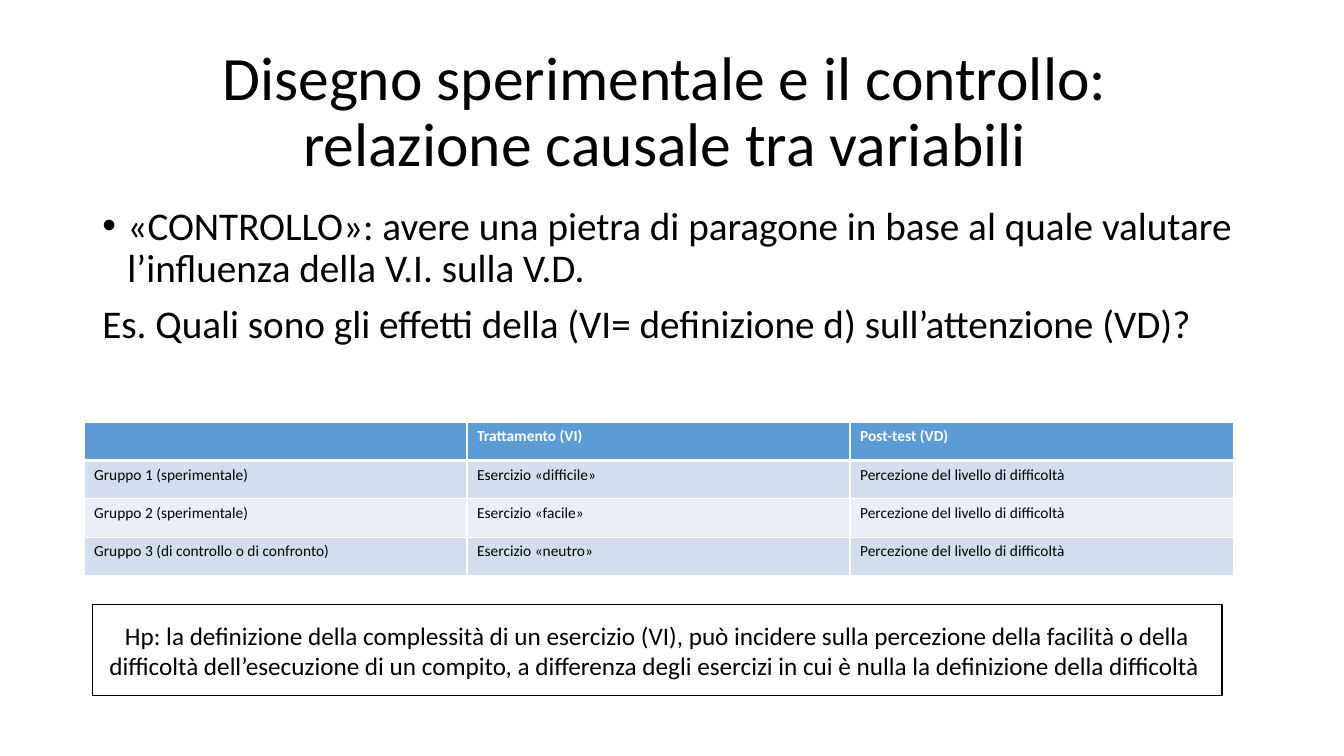
from lxml.etree import SubElement
from pptx import Presentation
from pptx.dml.color import RGBColor
from pptx.enum.shapes import MSO_SHAPE as Shape
from pptx.enum.text import MSO_ANCHOR as Anchor, PP_ALIGN as Align
from pptx.oxml.ns import qn
from pptx.util import Pt

FONT = "Calibri"
COLORS = {
    "text": "000000",
    "white": "FFFFFF",
    "header": "5B9BD5",
    "odd_row": "D2DEEF",
    "even_row": "EAEFF7",
}
TITLE = "Disegno sperimentale e il controllo: \nrelazione causale tra variabili "
CONTROL = ("«CONTROLLO»: avere una pietra di paragone in base al quale valutare "
           "l’influenza della V.I. sulla V.D.")
EXAMPLE = "Es. Quali sono gli effetti della (VI= definizione d) sull’attenzione (VD)?"
HYPOTHESIS = ("Hp: la definizione della complessità di un esercizio (VI), può incidere "
              "sulla percezione della facilità o della difficoltà dell’esecuzione di un "
              "compito, a differenza degli esercizi in cui è nulla la definizione della "
              "difficoltà ")
OUTCOME = "Percezione del livello di difficoltà"
GROUPS = [
    ("", "Trattamento (VI)", "Post-test (VD)"),
    ("Gruppo 1 (sperimentale)", "Esercizio «difficile»", OUTCOME),
    ("Gruppo 2 (sperimentale)", "Esercizio «facile»", OUTCOME),
    ("Gruppo 3 (di controllo o di confronto)", "Esercizio «neutro»", OUTCOME),
]


def color(name):
    return RGBColor.from_string(COLORS[name])


def write(para, text, size, ink="text", bold=False):
    para.text = text
    for span in para.runs:
        span.font.name = FONT
        span.font.size = Pt(size)
        span.font.bold = bold
        span.font.color.rgb = color(ink)
    if not text:
        SubElement(para._p, qn("a:endParaRPr"), sz=str(size * 100))


def add_text(page, left, top, width, height, texts, size, align, anchor):
    box = page.shapes.add_textbox(Pt(left), Pt(top), Pt(width), Pt(height))
    frame = box.text_frame
    frame.word_wrap = True
    frame.vertical_anchor = anchor
    for index, text in enumerate(texts):
        para = frame.add_paragraph() if index else frame.paragraphs[0]
        write(para, text, size)
        para.alignment = align
        para.line_spacing = 0.9
        if index:
            para.space_before = Pt(10)
    return frame


def add_bullet(para, indent):
    props = para._p.get_or_add_pPr()
    props.set("marL", str(Pt(indent)))
    props.set("indent", str(-Pt(indent)))
    SubElement(props, qn("a:buFont"), typeface="Arial")
    SubElement(props, qn("a:buChar"), char="•")


def add_borders(cell, widths):
    props = cell._tc.get_or_add_tcPr()
    for side, width in widths.items():
        line = SubElement(props, qn(f"a:ln{side}"), w=str(Pt(width)))
        fill = SubElement(line, qn("a:solidFill"))
        SubElement(fill, qn("a:srgbClr"), val=COLORS["white"])


def add_group_table(page, left, top, width, row_height):
    rows, columns = len(GROUPS), len(GROUPS[0])
    table = page.shapes.add_table(rows, columns, Pt(left), Pt(top),
                                  Pt(width), Pt(row_height * rows)).table
    for r, texts in enumerate(GROUPS):
        is_header = r == 0
        fill = "header" if is_header else "odd_row" if r % 2 else "even_row"
        for c, text in enumerate(texts):
            cell = table.cell(r, c)
            add_borders(cell, {"L": 1, "R": 1, "T": 3 if r == 1 else 1,
                               "B": 3 if is_header else 1})
            cell.fill.solid()
            cell.fill.fore_color.rgb = color(fill)
            write(cell.text_frame.paragraphs[0], text, 11,
                  "white" if is_header else "text", is_header)


def add_framed_note(page, left, top, width, height, text, size):
    box = page.shapes.add_shape(Shape.RECTANGLE, Pt(left), Pt(top), Pt(width), Pt(height))
    box.shadow.inherit = False
    box.fill.solid()
    box.fill.fore_color.rgb = color("white")
    box.line.color.rgb = color("text")
    box.line.width = Pt(1)
    frame = box.text_frame
    frame.word_wrap = True
    frame.vertical_anchor = Anchor.MIDDLE
    para = frame.paragraphs[0]
    write(para, text, size)
    para.alignment = Align.CENTER


def main():
    deck = Presentation()
    deck.slide_width, deck.slide_height = Pt(960), Pt(540)
    page = deck.slides.add_slide(deck.slide_layouts[6])

    # Title and explanation
    add_text(page, 66, 28.75, 828, 104.4, [TITLE], 44, Align.CENTER, Anchor.MIDDLE)
    body = add_text(page, 66, 143.75, 828, 342.6, [CONTROL, EXAMPLE], 28,
                    Align.LEFT, Anchor.TOP)
    add_bullet(body.paragraphs[0], 18)

    # Experimental groups
    add_group_table(page, 60, 301.5, 820.8, 27.4)

    # Hypothesis
    add_framed_note(page, 66, 432, 807, 65, HYPOTHESIS, 18)

    deck.save("out.pptx")


if __name__ == "__main__":
    main()
